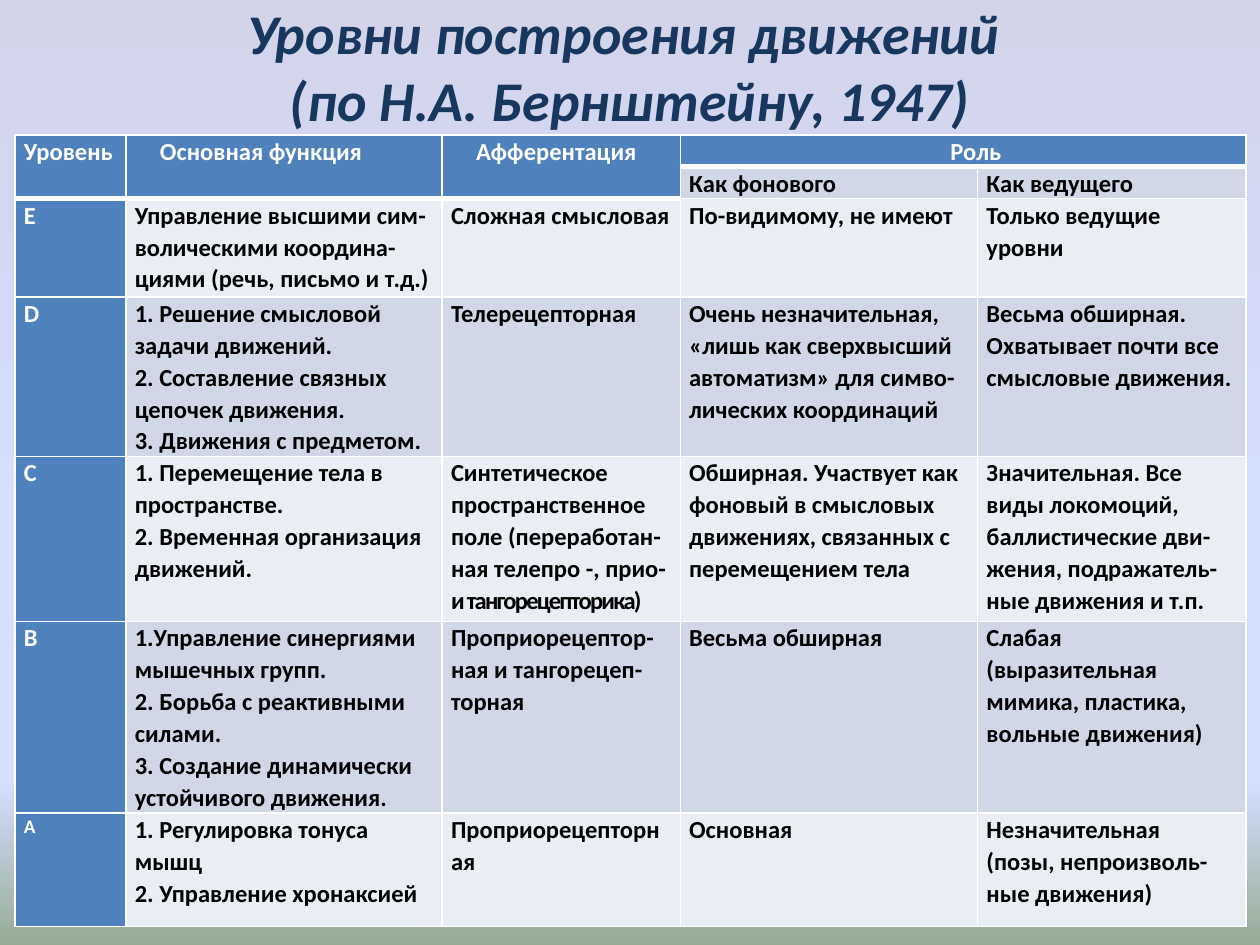
"""Build a slide with a table of Bernstein's levels of movement construction."""
from lxml import etree
from pptx import Presentation
from pptx.dml.color import RGBColor
from pptx.enum.text import MSO_ANCHOR, MSO_AUTO_SIZE, PP_ALIGN
from pptx.oxml.ns import qn
from pptx.util import Inches, Pt

CENTER, LEFT = PP_ALIGN.CENTER, PP_ALIGN.LEFT
MIDDLE, NO_FIT = MSO_ANCHOR.MIDDLE, MSO_AUTO_SIZE.NONE
TITLE_ONLY = 5
FONT = "Calibri"
COLORS = {"title": "17375E", "header": "4F81BD", "odd": "D0D8E8", "even": "E9EDF4",
          "light": "FFFFFF", "dark": "000000"}
BACKGROUND = [(0, "D3D4EA"), (53, "D4DEFF"), (83, "D4DEFF"), (100, "96AB94")]

TITLE = "Уровни построения движений \v(по Н.А. Бернштейну, 1947)"
HEADERS = ["Уровень", "Основная функция", "Афферентация", "Роль", ""]
ROLES = ["", "", "", "Как фонового", "Как ведущего"]
LEVELS = [
    ["Е", "Управление высшими сим-волическими координа-циями (речь, письмо и т.д.)",
     "Сложная смысловая", "По-видимому, не имеют", "Только ведущие уровни"],
    ["D", "1. Решение смысловой задачи движений.\n2. Составление связных цепочек движения.\n"
     "3. Движения с предметом.", "Телерецепторная",
     "Очень незначительная, «лишь как сверхвысший автоматизм» для симво-лических координаций",
     "Весьма обширная.\nОхватывает почти все смысловые движения."],
    ["С", "1. Перемещение тела в пространстве.\n2. Временная организация движений.",
     "Синтетическое пространственное поле (переработан-ная телепро -, прио- ",
     "Обширная. Участвует как фоновый в смысловых движениях, связанных с перемещением тела",
     "Значительная. Все виды локомоций, баллистические дви-жения, подражатель-ные движения и т.п."],
    ["B", "1.Управление синергиями мышечных групп.\n2. Борьба с реактивными силами.\n"
     "3. Создание динамически устойчивого движения.",
     "Проприорецептор-ная и тангорецеп-торная", "Весьма обширная",
     "Слабая (выразительная мимика, пластика, вольные движения)"],
    ["A", "1. Регулировка тонуса мышц\n2. Управление хронаксией", "Проприорецепторная",
     "Основная", "Незначительная\n(позы, непроизволь-ные движения)"],
]
CONDENSED = {(4, 2): "и тангорецепторика)"}
SMALL_LEVEL = (6, 0)
COLUMN_WIDTHS = [0.88, 2.51, 1.89, 2.36, 2.13]
ROW_HEIGHTS = [0.19, 0.19, 0.78, 1.25, 1.31, 1.49, 0.9]
MERGES = [((0, column), (1, column)) for column in range(3)] + [((0, 3), (0, 4))]
MARGINS = {"margin_left": Inches(0.07), "margin_right": Inches(0.07),
           "margin_top": 0, "margin_bottom": 0}


def set_attributes(target, values):
    for name, value in values.items():
        setattr(target, name, value)


def set_font(font, size, color, italic=False):
    set_attributes(font, {"name": FONT, "size": Pt(size), "bold": True, "italic": italic})
    font.color.rgb = RGBColor.from_string(COLORS[color])


def add_color(parent, color):
    etree.SubElement(parent, qn("a:srgbClr"), val=color)


def paint_background(slide):
    fill = slide.background.fill
    fill.gradient()
    fill.gradient_angle = 270
    stops = slide.background._cSld.find(".//" + qn("a:gsLst"))
    for stop in list(stops):
        stops.remove(stop)
    for share, color in BACKGROUND:
        add_color(etree.SubElement(stops, qn("a:gs"), pos=str(share * 1000)), color)


def add_borders(cell, bottom):
    properties = cell._tc.get_or_add_tcPr()
    for side, width in (("L", 1), ("R", 1), ("T", 1), ("B", bottom)):
        line = etree.SubElement(properties, qn("a:ln" + side), w=str(Pt(width)))
        add_color(etree.SubElement(line, qn("a:solidFill")), COLORS["light"])


def fill_cell(cell, row, column, text):
    is_header = row == 0 or column == 0 or (row == 1 and column < 3)
    set_attributes(cell, MARGINS)
    add_borders(cell, 3 if row == 0 else 1)
    cell.fill.solid()
    band = "header" if is_header else "odd" if row % 2 else "even"
    cell.fill.fore_color.rgb = RGBColor.from_string(COLORS[band])
    if not text:
        return
    cell.text_frame.text = text
    if (row, column) in CONDENSED:
        tail = cell.text_frame.paragraphs[-1].add_run()
        tail.text = CONDENSED[row, column]
        tail.font._element.set("spc", "-100")
    for paragraph in cell.text_frame.paragraphs:
        paragraph.line_spacing = 1.07
        paragraph.alignment = CENTER if (row, column) == (0, 3) else LEFT
        if row == 0 and column:
            paragraph._p.get_or_add_pPr().set("indent", str(Inches(0.2)))
        for run in paragraph.runs:
            set_font(run.font, 11 if (row, column) == SMALL_LEVEL else 14,
                     "light" if is_header else "dark")


def add_title(slide):
    title = slide.shapes.title
    set_attributes(title, {"left": Inches(0.12), "top": Inches(0.05),
                           "width": Inches(9.76), "height": Inches(0.94)})
    frame = title.text_frame
    frame.text = TITLE
    set_attributes(frame, {"vertical_anchor": MIDDLE, "auto_size": NO_FIT, "word_wrap": True})
    frame.paragraphs[0].alignment = CENTER
    for run in frame.paragraphs[0].runs:
        set_font(run.font, 32, "title", italic=True)


def add_levels_table(slide):
    rows = [HEADERS, ROLES] + LEVELS
    table = slide.shapes.add_table(
        len(rows), len(HEADERS), Inches(0.12), Inches(1.07),
        Inches(sum(COLUMN_WIDTHS)), Inches(sum(ROW_HEIGHTS))).table
    table.first_col = True
    for column, width in zip(table.columns, COLUMN_WIDTHS):
        column.width = Inches(width)
    for row, height in zip(table.rows, ROW_HEIGHTS):
        row.height = Inches(height)
    for start, end in MERGES:
        table.cell(*start).merge(table.cell(*end))
    for row, texts in enumerate(rows):
        for column, text in enumerate(texts):
            fill_cell(table.cell(row, column), row, column, text)


def main():
    deck = Presentation()
    deck.slide_width, deck.slide_height = Inches(10), Inches(7.5)
    slide = deck.slides.add_slide(deck.slide_layouts[TITLE_ONLY])
    paint_background(slide)
    add_title(slide)
    add_levels_table(slide)
    deck.save("out.pptx")


if __name__ == "__main__":
    main()
